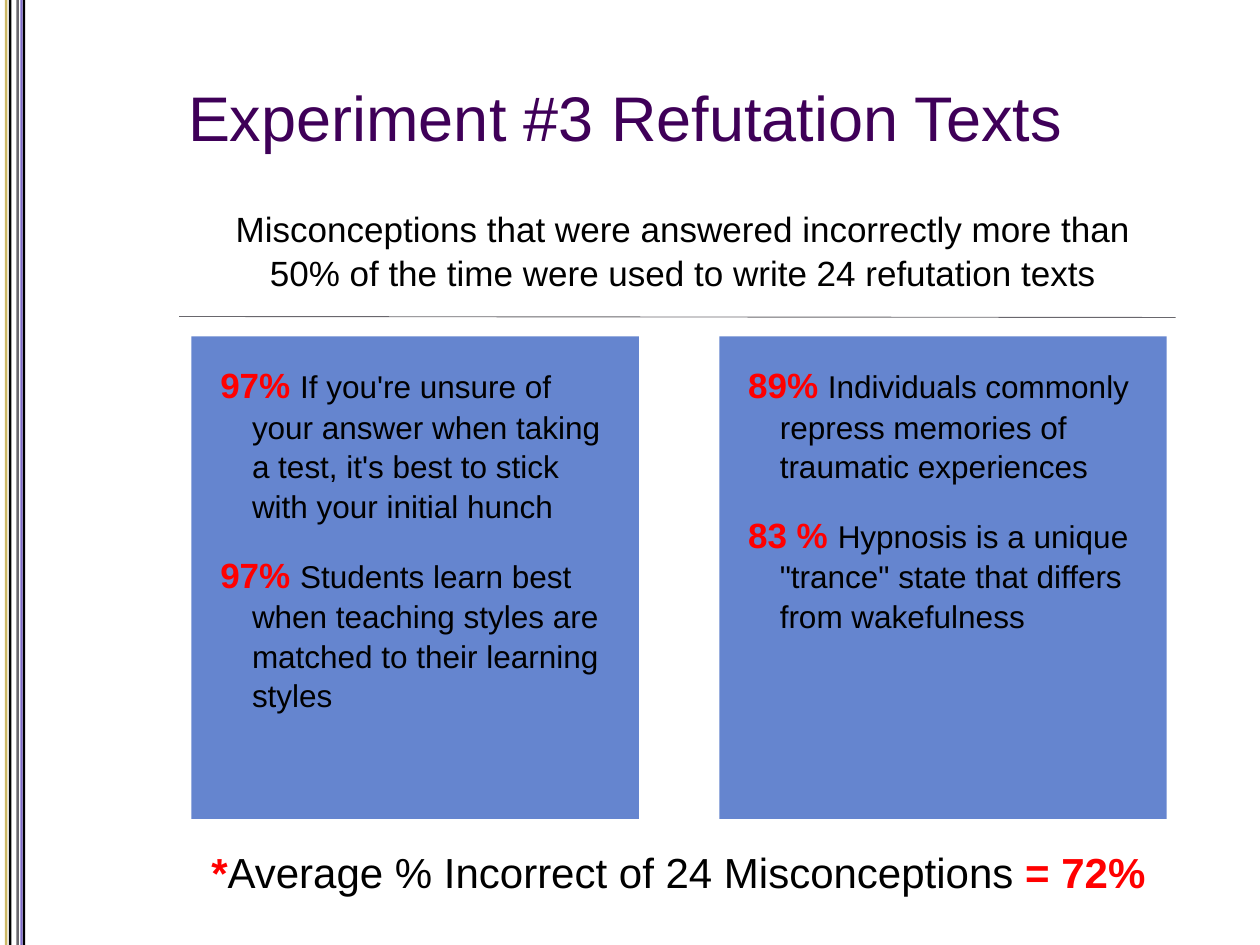
from lxml import etree
from pptx import Presentation
from pptx.dml.color import RGBColor
from pptx.enum.shapes import MSO_CONNECTOR, MSO_SHAPE
from pptx.enum.text import MSO_ANCHOR, MSO_AUTO_SIZE, PP_ALIGN
from pptx.oxml.ns import qn
from pptx.util import Cm, Pt

RECTANGLE = MSO_SHAPE.RECTANGLE
STRAIGHT = MSO_CONNECTOR.STRAIGHT
TOP, MIDDLE = MSO_ANCHOR.TOP, MSO_ANCHOR.MIDDLE
LEFT, CENTER = PP_ALIGN.LEFT, PP_ALIGN.CENTER
NO_AUTOFIT = MSO_AUTO_SIZE.NONE
FIT_SHAPE = MSO_AUTO_SIZE.SHAPE_TO_FIT_TEXT

FONT = "Arial"
BLACK, RED, PURPLE, BLUE, GRAY = "000000", "FF0000", "3F0058", "6585CF", "69676D"
PAGE_WIDTH, PAGE_HEIGHT = 25.4, 19.05
INSET = 0.51

STRIPES = [
    (0, 0.05, "FFFFFF"),
    (0.18, 0.05, BLACK),
    (0.28, 0.03, "FFFFFF"),
    (0.33, 0.05, GRAY),
    (0.41, 0.05, "7E6BC9"),
    (0.46, 0.05, BLACK),
    (0.1, 0.05, "CEB966"),
]
LEFT_FINDINGS = [
    ("97% ", "If you're unsure of your answer when taking a test, "
             "it's best to stick with your initial hunch"),
    ("97% ", "Students learn best when teaching styles are matched "
             "to their learning styles"),
]
RIGHT_FINDINGS = [
    ("89% ", "Individuals commonly repress memories of traumatic experiences"),
    ("83 % ", "Hypnosis is a unique \"trance\" state that differs from wakefulness"),
]


def color(value):
    """Turn a hex string into a colour."""
    return RGBColor.from_string(value)


def place(shape, left, top, width, height):
    """Move and size a shape, in centimetres."""
    shape.left, shape.top = Cm(left), Cm(top)
    shape.width, shape.height = Cm(width), Cm(height)


def add_span(para, text, size, hue, bold=False):
    """Add a formatted run to a paragraph."""
    span = para.add_run()
    span.text = text
    span.font.name = FONT
    span.font.size = Pt(size)
    span.font.bold = bold
    span.font.color.rgb = color(hue)


def set_frame(box, anchor, top=INSET, bottom=INSET):
    """Set the insets and anchor of a placeholder and return its text frame."""
    frame = box.text_frame
    frame.word_wrap = True
    frame.auto_size = NO_AUTOFIT
    frame.vertical_anchor = anchor
    frame.margin_left = frame.margin_right = Cm(INSET)
    frame.margin_top, frame.margin_bottom = Cm(top), Cm(bottom)
    return frame


def set_paragraph(para, alignment, margin=0, indent=0):
    """Set spacing and indents of an unbulleted paragraph."""
    para.alignment = alignment
    para.line_spacing = 1.05
    para.space_before = Pt(15)
    properties = para._p.get_or_add_pPr()
    properties.set("marL", str(Cm(margin)))
    properties.set("indent", str(Cm(indent)))
    etree.SubElement(properties, qn("a:buNone"))


def add_stripe(page, left, width, hue):
    """Draw one full-height stripe at the left edge."""
    stripe = page.shapes.add_shape(
        RECTANGLE, Cm(left), Cm(0), Cm(width), Cm(PAGE_HEIGHT))
    stripe.shadow.inherit = False
    stripe.fill.solid()
    stripe.fill.fore_color.rgb = color(hue)
    stripe.line.fill.background()


def add_divider(page):
    """Draw the thin line under the introduction."""
    divider = page.shapes.add_connector(
        STRAIGHT, Cm(3.61), Cm(6.38), Cm(23.7), Cm(6.4))
    divider.line.color.rgb = color(GRAY)
    divider.line.width = Pt(0.5)
    etree.SubElement(divider._element.spPr, qn("a:effectLst"))


def fill_title(box):
    """Write the slide title."""
    place(box, 3.28, 0.76, 20.83, 3.18)
    para = set_frame(box, MIDDLE).paragraphs[0]
    para.alignment = LEFT
    add_span(para, "Experiment #3 Refutation Texts", 36, PURPLE)


def fill_introduction(box):
    """Write the centred introduction."""
    place(box, 3.61, 4.62, 20.32, 1.78)
    para = set_frame(box, MIDDLE, top=0, bottom=0.97).paragraphs[0]
    set_paragraph(para, CENTER)
    add_span(para, "Misconceptions that were answered incorrectly more than "
                   "50% of the time were used to write 24 refutation texts",
             20, BLACK)


def fill_panel(box, left, findings):
    """Write a blue panel of percentages and misconceptions."""
    place(box, left, 6.78, 9.02, 9.73)
    box.fill.solid()
    box.fill.fore_color.rgb = color(BLUE)
    frame = set_frame(box, TOP)
    for index, (share, statement) in enumerate(findings):
        para = frame.add_paragraph() if index else frame.paragraphs[0]
        set_paragraph(para, LEFT, 0.71, -0.64)
        add_span(para, share, 20, RED, bold=True)
        add_span(para, statement, 18, BLACK)


def add_summary(page):
    """Write the average below the panels."""
    box = page.shapes.add_textbox(Cm(4.01), Cm(16.94), Cm(19.69), Cm(1.27))
    box.text_frame.word_wrap = True
    box.text_frame.auto_size = FIT_SHAPE
    para = box.text_frame.paragraphs[0]
    add_span(para, "*", 24, RED, bold=True)
    add_span(para, "Average % Incorrect of 24 Misconceptions ", 24, BLACK)
    add_span(para, "= 72%", 24, RED, bold=True)


def main():
    """Build and save the slide."""
    deck = Presentation()
    deck.slide_width, deck.slide_height = Cm(PAGE_WIDTH), Cm(PAGE_HEIGHT)
    page = deck.slides.add_slide(deck.slide_layouts.get_by_name("Comparison"))
    title, introduction, left_panel, spare, right_panel = list(page.placeholders)[:5]
    spare._element.getparent().remove(spare._element)
    for stripe in STRIPES:
        add_stripe(page, *stripe)
    add_divider(page)
    fill_title(title)
    fill_introduction(introduction)
    fill_panel(left_panel, 3.86, LEFT_FINDINGS)
    fill_panel(right_panel, 14.5, RIGHT_FINDINGS)
    add_summary(page)
    deck.save("out.pptx")


if __name__ == "__main__":
    main()
